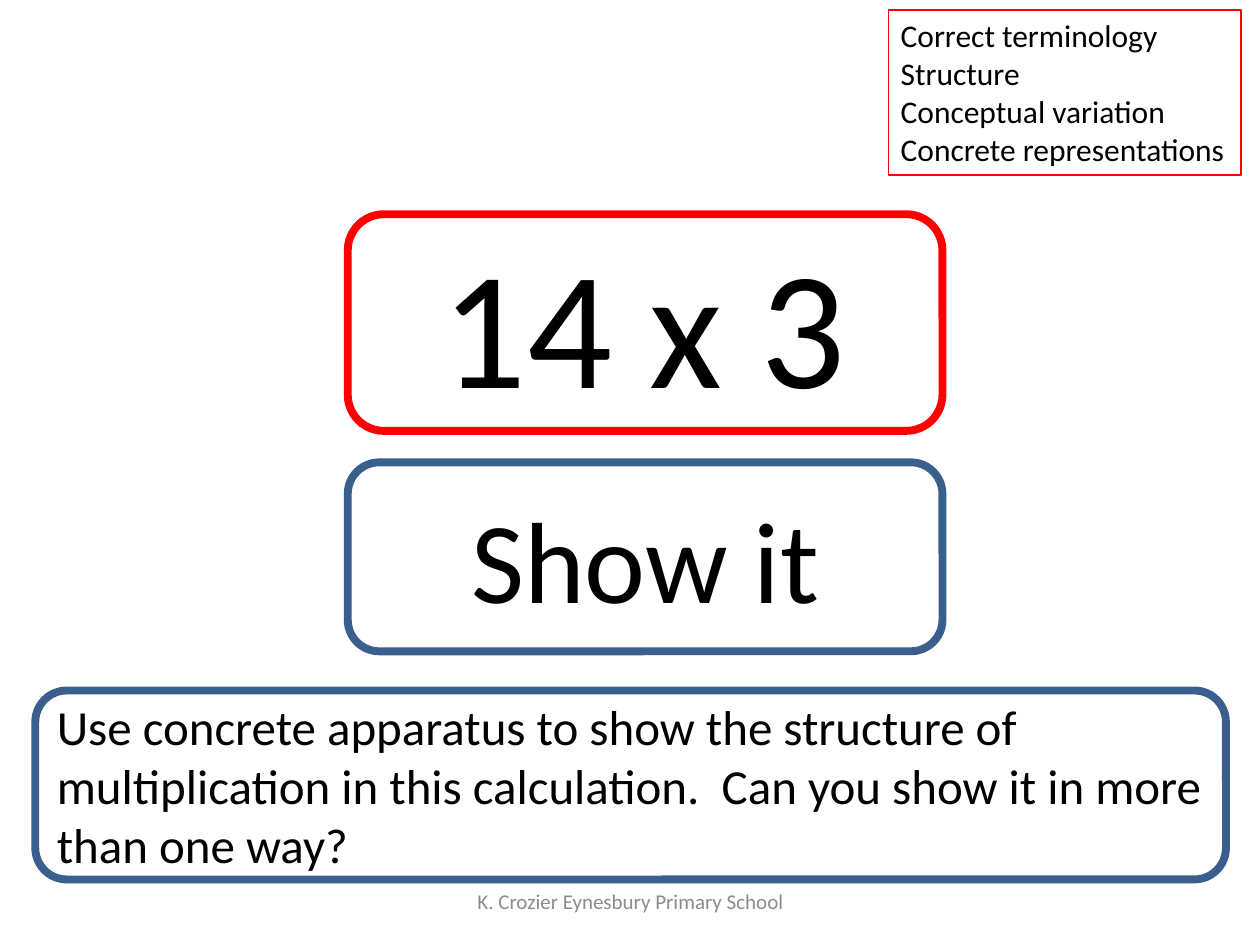
from dataclasses import dataclass

from pptx import Presentation
from pptx import util as u
from pptx.dml.color import RGBColor
from pptx.enum import shapes, text

SLIDE_WIDTH, SLIDE_HEIGHT = u.Inches(10), u.Inches(7.5)


@dataclass(frozen=True)
class Theme:
    font: str = "Calibri"
    ink: str = "000000"
    muted: str = "8C8C8C"
    red: str = "FF0000"
    blue: str = "3A5F8C"
    huge: int = 96
    title: int = 66
    body: int = 28
    label: int = 18
    footer: int = 12
    thick: float = 4.5
    thin: float = 0.75


@dataclass(frozen=True)
class Area:
    """Left, top, width and height as percentages of the slide."""
    left: float
    top: float
    width: float
    height: float

    def lengths(self) -> tuple[int, int, int, int]:
        return (
            int(SLIDE_WIDTH * self.left / 100),
            int(SLIDE_HEIGHT * self.top / 100),
            int(SLIDE_WIDTH * self.width / 100),
            int(SLIDE_HEIGHT * self.height / 100),
        )


@dataclass(frozen=True)
class Panel:
    area: Area
    outline: str
    weight: float
    kind: shapes.MSO_SHAPE = shapes.MSO_SHAPE.ROUNDED_RECTANGLE


THEME = Theme()
CARD_LEFT, CARD_WIDTH, CARD_HEIGHT = 27.6, 47.2, 20
SUM_TOP, SUM_HEIGHT = 22.67, 22.93

SUM_TEXT = Area(34.1, SUM_TOP, 34.4, SUM_HEIGHT)
FOOTER = Area(34.2, 92.67, 31.7, 5.33)
SHOW_CARD = Panel(Area(CARD_LEFT, 48.93, CARD_WIDTH, CARD_HEIGHT), THEME.blue, THEME.thick)
SUM_CARD = Panel(Area(CARD_LEFT, SUM_TOP, CARD_WIDTH, SUM_HEIGHT), THEME.red, THEME.thick)
TASK_CARD = Panel(Area(2.8, 73.07, 94.5, CARD_HEIGHT), THEME.blue, THEME.thick)
FOCUS_BOX = Panel(Area(70.5, 1.07, 28, 17.47), THEME.red, THEME.thin, shapes.MSO_SHAPE.RECTANGLE)

FOCUS_POINTS = (
    "Correct terminology",
    "Structure",
    "Conceptual variation",
    "Concrete representations",
)


def add_panel(slide, panel: Panel):
    shape = slide.shapes.add_shape(panel.kind, *panel.area.lengths())
    shape.shadow.inherit = False
    shape.fill.background()
    shape.line.color.rgb = RGBColor.from_string(panel.outline)
    shape.line.width = u.Pt(panel.weight)
    return shape


def write(shape, *lines: str, size: int, color: str = THEME.ink,
          align=text.PP_ALIGN.LEFT, anchor=text.MSO_ANCHOR.MIDDLE,
          wrap: bool = True) -> None:
    frame = shape.text_frame
    frame.word_wrap = wrap
    frame.vertical_anchor = anchor
    if not wrap:
        frame.auto_size = text.MSO_AUTO_SIZE.SHAPE_TO_FIT_TEXT
    for index, line in enumerate(lines):
        paragraph = frame.add_paragraph() if index else frame.paragraphs[0]
        paragraph.alignment = align
        run = paragraph.add_run()
        run.text = line
        run.font.name = THEME.font
        run.font.size = u.Pt(size)
        run.font.color.rgb = RGBColor.from_string(color)


def main() -> None:
    presentation = Presentation()
    presentation.slide_width, presentation.slide_height = SLIDE_WIDTH, SLIDE_HEIGHT
    slide = presentation.slides.add_slide(presentation.slide_layouts[6])

    write(slide.shapes.add_textbox(*SUM_TEXT.lengths()), "14 x 3",
          size=THEME.huge, anchor=text.MSO_ANCHOR.TOP, wrap=False)
    write(add_panel(slide, SHOW_CARD), "Show it",
          size=THEME.title, align=text.PP_ALIGN.CENTER)
    add_panel(slide, SUM_CARD)
    write(add_panel(slide, TASK_CARD),
          "Use concrete apparatus to show the structure of multiplication in this "
          "calculation.  Can you show it in more than one way?", size=THEME.body)
    write(add_panel(slide, FOCUS_BOX), *FOCUS_POINTS,
          size=THEME.label, anchor=text.MSO_ANCHOR.TOP, wrap=False)
    write(slide.shapes.add_textbox(*FOOTER.lengths()),
          "K. Crozier Eynesbury Primary School",
          size=THEME.footer, color=THEME.muted, align=text.PP_ALIGN.CENTER)

    presentation.save("out.pptx")


if __name__ == "__main__":
    main()
